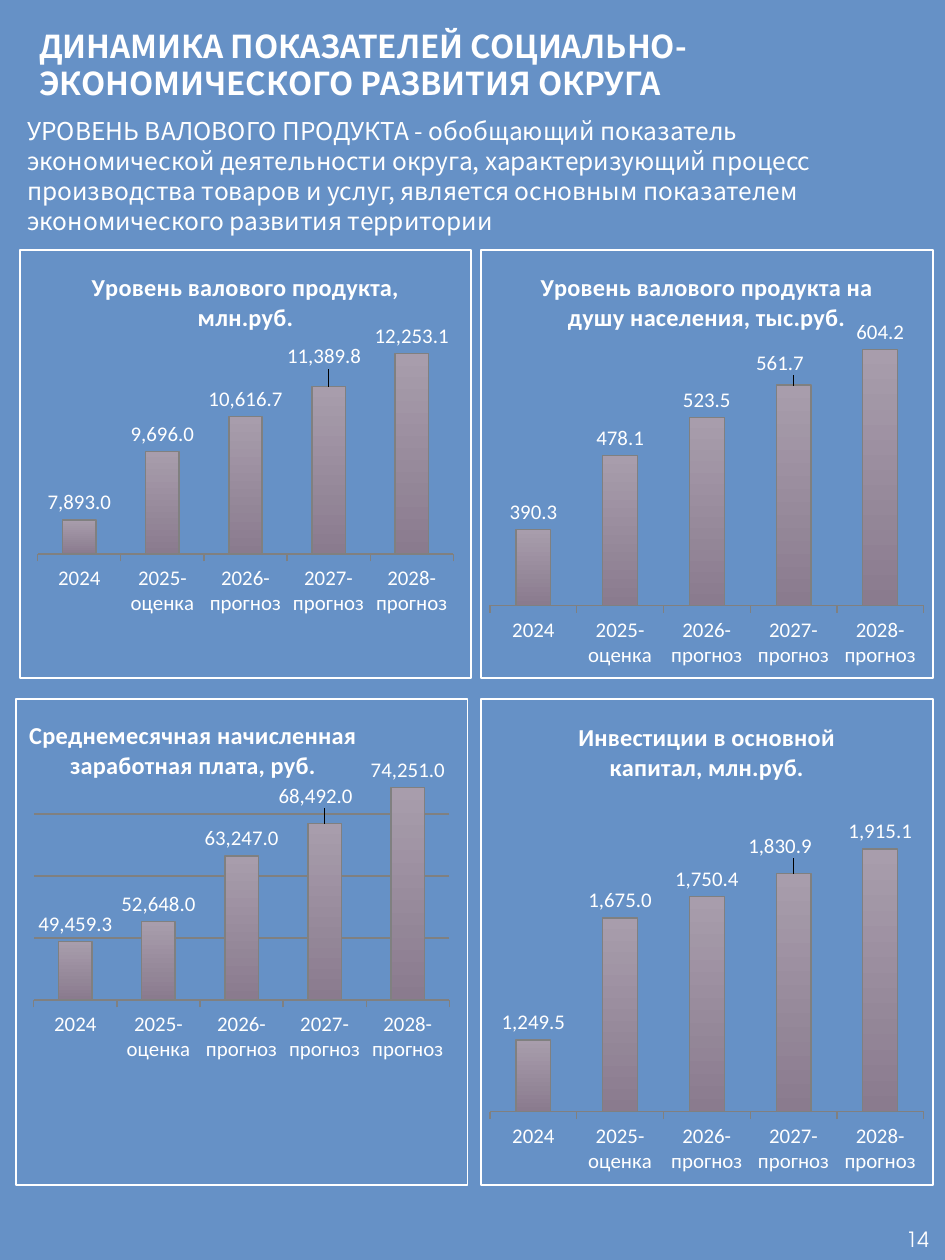
from lxml import etree
from pptx import Presentation
from pptx.chart.data import CategoryChartData
from pptx.dml.color import RGBColor
from pptx.enum.chart import XL_CHART_TYPE, XL_LABEL_POSITION, XL_TICK_LABEL_POSITION, XL_TICK_MARK
from pptx.enum.text import MSO_ANCHOR, PP_ALIGN
from pptx.oxml import parse_xml
from pptx.oxml.ns import nsdecls, qn
from pptx.util import Cm, Pt

COLUMNS = XL_CHART_TYPE.COLUMN_CLUSTERED
OUTSIDE_END = XL_LABEL_POSITION.OUTSIDE_END
LOW = XL_TICK_LABEL_POSITION.LOW
TICK_OUT, TICK_NONE = XL_TICK_MARK.OUTSIDE, XL_TICK_MARK.NONE
TOP, MIDDLE = MSO_ANCHOR.TOP, MSO_ANCHOR.MIDDLE
LEFT, RIGHT = PP_ALIGN.LEFT, PP_ALIGN.RIGHT

YEARS = ["2024", "2025-оценка", "2026-прогноз", "2027-прогноз", "2028-прогноз"]
CHART_WIDTH = 9.14
UPPER, LOWER = (5.03, 8.66), (14.07, 9.83)
SHIFTED_POINT = 3

CHARTS = [
    dict(title="Уровень валового продукта, млн.руб.", left=0.38, row=UPPER,
         values=[7893, 9696, 10616.7, 11389.8, 12253.1], scale=(7000, 12500, 2500),
         plot=(0.04, 0.22, 0.92, 0.49), shift=(-0.01, -0.03)),
    dict(title="Уровень валового продукта на душу населения, тыс.руб.", left=9.68, row=UPPER,
         values=[390.3, 478.1, 523.5, 561.7, 604.2], scale=(300, 610, 2500),
         plot=(0.02, 0.22, 0.96, 0.61), shift=(-0.03, -0.01)),
    dict(title="Инвестиции в основной капитал, млн.руб.", left=9.68, row=LOWER,
         values=[1249.5, 1675, 1750.4, 1830.9, 1915.1], scale=(1000, 2100, 200),
         plot=(0.02, 0.2, 0.96, 0.65), shift=(-0.03, -0.02)),
    dict(title="Среднемесячная начисленная заработная плата, руб.", left=0.3, row=LOWER,
         values=[49459.3, 52648, 63247, 68492, 74251], scale=(40000, 74500, 10000),
         plot=(0.04, 0.18, 0.92, 0.44), shift=(-0.02, -0.02),
         grid=True, title_at=(0.02, 0.03)),
]


def color(value):
    return RGBColor.from_string(value)


def set_layout(parent, index, values, inner=False, edge=True):
    old = parent.find(qn("c:layout"))
    if old is not None:
        parent.remove(old)
    layout = parse_xml(f"<c:layout {nsdecls('c')}><c:manualLayout/></c:layout>")
    settings = [("layoutTarget", "inner")] if inner else []
    if edge:
        settings += [("xMode", "edge"), ("yMode", "edge")]
    settings += zip("xywh", values)
    for name, value in settings:
        etree.SubElement(layout[0], qn(f"c:{name}")).set("val", str(value))
    parent.insert(index, layout)


class IndicatorPage:
    """Style and current slide for the district indicators."""

    WHITE, BACKGROUND, AXIS = "FFFFFF", "6691C6", "808080"
    BAR_TOP, BAR_BOTTOM = "A89DAC", "8A7B8E"
    HEADING_FONT, CHART_FONT, NUMBER_FONT = "Noto Sans CJK SC", "Calibri", "TeX Gyre Adventor"

    def __init__(self, deck):
        self.page = deck.slides.add_slide(deck.slide_layouts[5])
        self.page.background.fill.solid()
        self.page.background.fill.fore_color.rgb = color(self.BACKGROUND)

    def style(self, font, name, size, bold=False):
        font.name, font.size, font.bold = name, Pt(size), bold
        font.color.rgb = color(self.WHITE)

    def set_text(self, box, place, text, name, size, bold=False, spacing=None,
                 align=LEFT, anchor=TOP, indent=0.25):
        box.left, box.top, box.width, box.height = map(Cm, place)
        frame = box.text_frame
        frame.word_wrap = True
        frame.vertical_anchor = anchor
        frame.margin_left, frame.margin_right = Cm(indent), Cm(0.25)
        frame.margin_top = frame.margin_bottom = Cm(0.13)
        frame.text = text
        para = frame.paragraphs[0]
        para.alignment = align
        if spacing:
            para.line_spacing = Pt(spacing)
        self.style(para.font, name, size, bold)

    def title(self, place, text):
        self.set_text(self.page.shapes.title, place, text, self.HEADING_FONT, 18,
                      bold=True, spacing=21.5, indent=0.43)

    def text(self, place, text, name, size, **options):
        box = self.page.shapes.add_textbox(*map(Cm, place))
        self.set_text(box, place, text, name, size, **options)

    def chart(self, title, left, row, values, scale, plot, shift, grid=False, title_at=None):
        data = CategoryChartData(number_format="0.0")
        data.categories = YEARS
        data.add_series(title, values)
        place = map(Cm, (left, row[0], CHART_WIDTH, row[1]))
        chart = self.page.shapes.add_chart(COLUMNS, *place, data).chart
        chart.has_legend = False
        self.style(chart.font, self.CHART_FONT, 12)
        frame = chart.chart_title.text_frame
        frame.text = title
        self.style(frame.paragraphs[0].font, self.CHART_FONT, 14, bold=True)
        if title_at:
            set_layout(chart.element.find(f".//{qn('c:title')}"), 1, title_at)
        set_layout(chart.element.find(f".//{qn('c:plotArea')}"), 0, plot, inner=True)
        self.axes(chart, scale, grid)
        self.bars(chart, shift)
        chart.element.find(qn("c:chart")).addnext(parse_xml(
            f"<c:spPr {nsdecls('c', 'a')}><a:noFill/><a:ln w='12700'><a:solidFill>"
            f"<a:srgbClr val='{self.WHITE}'/></a:solidFill></a:ln></c:spPr>"))

    def axes(self, chart, scale, grid):
        years, amounts = chart.category_axis, chart.value_axis
        years.major_tick_mark, years.minor_tick_mark = TICK_OUT, TICK_NONE
        years.tick_label_position = LOW
        years.format.line.color.rgb = color(self.AXIS)
        amounts.minimum_scale, amounts.maximum_scale, amounts.major_unit = scale
        amounts.visible = False
        amounts.has_major_gridlines = grid
        if grid:
            amounts.major_gridlines.format.line.color.rgb = color(self.AXIS)

    def bars(self, chart, shift):
        plot = chart.plots[0]
        plot.gap_width, plot.vary_by_categories = 150, False
        series = plot.series[0]
        fill, line = series.format.fill, series.format.line
        fill.gradient()
        fill.gradient_angle = 270
        for stop, shade in zip(fill.gradient_stops, (self.BAR_TOP, self.BAR_BOTTOM)):
            stop.color.rgb = color(shade)
        line.color.rgb, line.width = color(self.AXIS), Pt(0.75)
        labels = series.data_labels
        labels.show_value, labels.position = True, OUTSIDE_END
        labels.number_format, labels.number_format_is_linked = "#,##0.0", False
        self.style(labels.font, self.CHART_FONT, 12)
        label = series.points[SHIFTED_POINT].data_label
        self.style(label.font, self.CHART_FONT, 12)
        label.position = OUTSIDE_END
        element = chart.element.find(f".//{qn('c:dLbl')}")
        set_layout(element, 1, shift, edge=False)
        element.insert(2, parse_xml(
            f"<c:numFmt {nsdecls('c')} formatCode='#,##0.0' sourceLinked='0'/>"))


def main():
    deck = Presentation()
    deck.slide_width, deck.slide_height = Cm(19.05), Cm(25.4)
    page = IndicatorPage(deck)
    page.title((0.36, 0.41, 18.39, 1.8),
               "ДИНАМИКА ПОКАЗАТЕЛЕЙ СОЦИАЛЬНО-ЭКОНОМИЧЕСКОГО РАЗВИТИЯ ОКРУГА")
    page.text((14.53, 24.31, 4.45, 1.35), "14", page.NUMBER_FONT, 12,
              align=RIGHT, anchor=MIDDLE)
    page.text((0.3, 2.21, 18.39, 2.67),
              "УРОВЕНЬ ВАЛОВОГО ПРОДУКТА - обобщающий показатель экономической деятельности "
              "округа, характеризующий процесс производства товаров и услуг, является "
              "основным показателем экономического развития территории",
              page.HEADING_FONT, 14, spacing=17)
    for chart in CHARTS:
        page.chart(**chart)
    deck.save("out.pptx")


if __name__ == "__main__":
    main()
